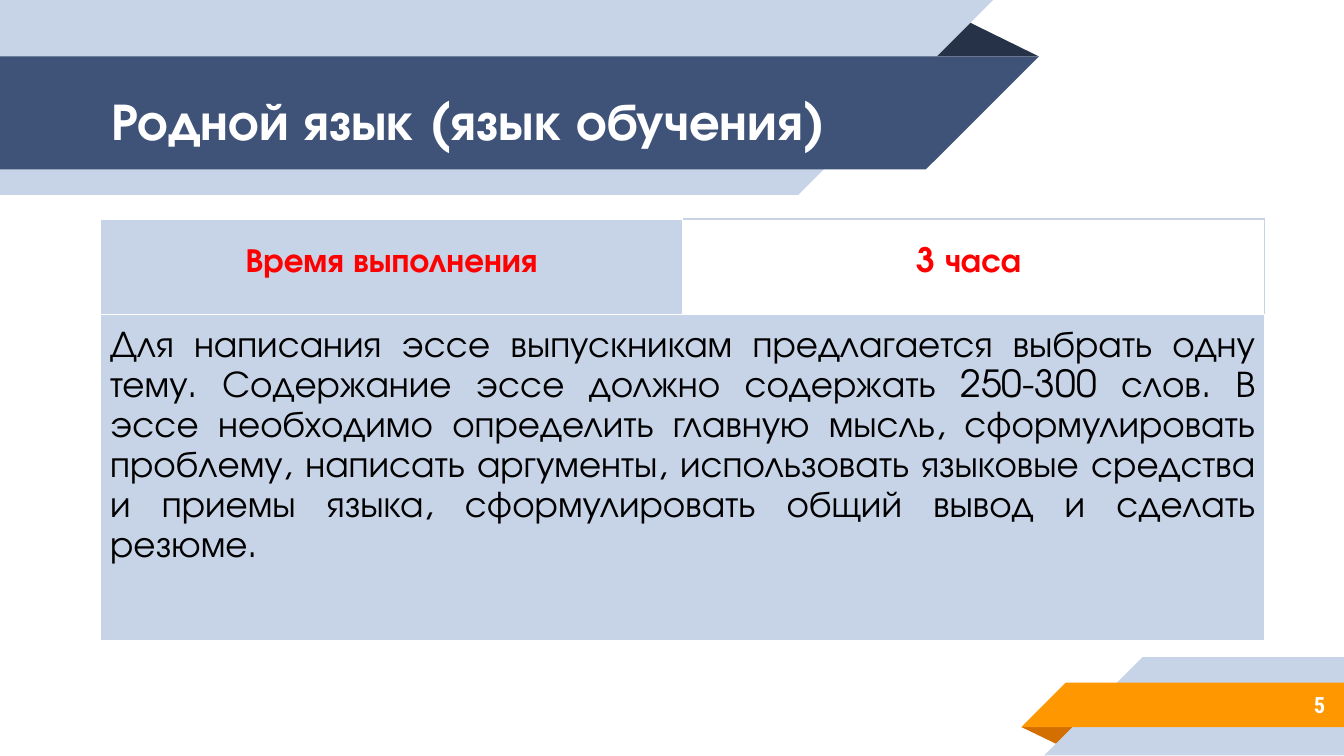
from lxml import etree
from pptx import Presentation
from pptx.dml.color import RGBColor
from pptx.enum.text import MSO_ANCHOR, MSO_AUTO_SIZE, PP_ALIGN
from pptx.oxml.ns import qn
from pptx.util import Inches, Pt

LEFT, CENTER, RIGHT, JUSTIFY = PP_ALIGN.LEFT, PP_ALIGN.CENTER, PP_ALIGN.RIGHT, PP_ALIGN.JUSTIFY
TOP, MIDDLE = MSO_ANCHOR.TOP, MSO_ANCHOR.MIDDLE
NO_AUTOFIT = MSO_AUTO_SIZE.NONE
TITLE_ONLY = 5
HEADING_FONT, NUMBER_FONT = "TeX Gyre Adventor", "Roboto Condensed"
PALE, NAVY, DARK_NAVY = "C7D3E6", "3F5378", "263248"
ORANGE, DARK_ORANGE = "FF9800", "D26F00"
WHITE, BLACK, RED = "FFFFFF", "000000", "FF0000"

BANDS = [
    (DARK_NAVY, [(7.16, 0.14), (7.73, 0.42), (6.88, 0.42)]),
    (PALE, [(0, 0), (7.39, 0), (5.94, 1.45), (0, 1.45)]),
    (NAVY, [(0, 0.42), (7.73, 0.42), (6.89, 1.26), (0, 1.26)]),
    (DARK_ORANGE, [(7.6, 5.41), (8.03, 5.41), (7.89, 5.55)]),
    (PALE, [(8.5, 4.89), (10, 4.89), (10, 5.62), (7.77, 5.62)]),
    (ORANGE, [(7.93, 5.08), (10, 5.08), (10, 5.41), (7.6, 5.41)]),
]
ESSAY_TASK = (
    "Для написания эссе выпускникам предлагается выбрать одну тему. "
    "Содержание эссе должно содержать 250-300 слов. В эссе необходимо "
    "определить главную мысль, сформулировать проблему, написать аргументы, "
    "использовать языковые средства и приемы языка, сформулировать общий "
    "вывод и сделать резюме. "
)


def color(value):
    return RGBColor.from_string(value)


def write(frame, text, size=18, font=HEADING_FONT, ink=WHITE, bold=True,
          align=LEFT, spacing=None):
    paragraph = frame.paragraphs[0]
    paragraph.alignment = align
    paragraph.line_spacing = spacing
    run = paragraph.add_run()
    run.text = text
    run.font.size = Pt(size)
    run.font.name = font
    run.font.bold = bold
    run.font.color.rgb = color(ink)


class SlideBuilder:
    """Holds the slide and adds each kind of element in its style."""

    def __init__(self, slide):
        self.shapes = slide.shapes

    def band(self, fill, points):
        corners = [(Inches(x), Inches(y)) for x, y in points]
        outline = self.shapes.build_freeform(*corners[0])
        outline.add_line_segments(corners[1:], close=True)
        band = outline.convert_to_shape()
        band.shadow.inherit = False
        band.fill.solid()
        band.fill.fore_color.rgb = color(fill)
        band.line.fill.background()

    def place(self, holder, box, insets):
        holder.left, holder.top, holder.width, holder.height = map(Inches, box)
        frame = holder.text_frame
        frame.word_wrap = True
        frame.auto_size = NO_AUTOFIT
        frame.vertical_anchor = MIDDLE
        (frame.margin_left, frame.margin_top,
         frame.margin_right, frame.margin_bottom) = map(Inches, insets)
        return frame

    def title(self, text, box):
        heading = self.shapes.title
        self.shapes._spTree.append(heading._element)
        write(self.place(heading, box, (0.24, 0.18, 0.1, 0.1)), text, size=28)

    def page_number(self, text, box):
        number = self.shapes.add_textbox(0, 0, 0, 0)
        frame = self.place(number, box, (0.1, 0.1, 0.1, 0.1))
        write(frame, text, size=12, font=NUMBER_FONT, align=RIGHT)

    def table(self, box, row_heights, columns):
        frame = self.shapes.add_table(len(row_heights), columns, *map(Inches, box))
        table = frame.table
        table.first_row = table.horz_banding = False
        for row, height in zip(table.rows, row_heights):
            row.height = Inches(height)
        return table

    def cell(self, cell, text, fill=None, anchor=MIDDLE, edges=(WHITE,) * 4, **style):
        cell.vertical_anchor = anchor
        cell.margin_left = cell.margin_right = Inches(0.07)
        cell.margin_top = cell.margin_bottom = Inches(0.08)
        properties = cell._tc.get_or_add_tcPr()
        for side, edge in zip(("lnL", "lnR", "lnT", "lnB"), edges):
            line = etree.SubElement(properties, qn(f"a:{side}"), w=str(Pt(0.75)))
            solid = etree.SubElement(line, qn("a:solidFill"))
            etree.SubElement(solid, qn("a:srgbClr"), val=edge)
        if fill:
            cell.fill.solid()
            cell.fill.fore_color.rgb = color(fill)
        else:
            cell.fill.background()
        write(cell.text_frame, text, **style)


def main():
    deck = Presentation()
    deck.slide_width = Inches(10)
    deck.slide_height = deck.slide_width * 9 // 16
    builder = SlideBuilder(deck.slides.add_slide(deck.slide_layouts[TITLE_ONLY]))

    for fill, points in BANDS:
        builder.band(fill, points)
    builder.title("Родной язык (язык обучения)", (0.59, 0.43, 6.16, 0.84))
    builder.page_number("5", (8.33, 5.07, 1.63, 0.35))

    exam = builder.table((0.75, 1.63, 8.66, 3.14), (0.71, 2.43), 2)
    exam.cell(1, 0).merge(exam.cell(1, 1))
    header = {"ink": RED, "align": CENTER, "spacing": Pt(13)}
    builder.cell(exam.cell(0, 0), "Время выполнения", fill=PALE, **header)
    builder.cell(exam.cell(0, 1), "3 часа ", edges=(WHITE, PALE, PALE, PALE), **header)
    builder.cell(exam.cell(1, 0), ESSAY_TASK, fill=PALE, anchor=TOP, size=20,
                 ink=BLACK, bold=False, align=JUSTIFY, spacing=1.15)

    deck.save("out.pptx")


if __name__ == "__main__":
    main()
